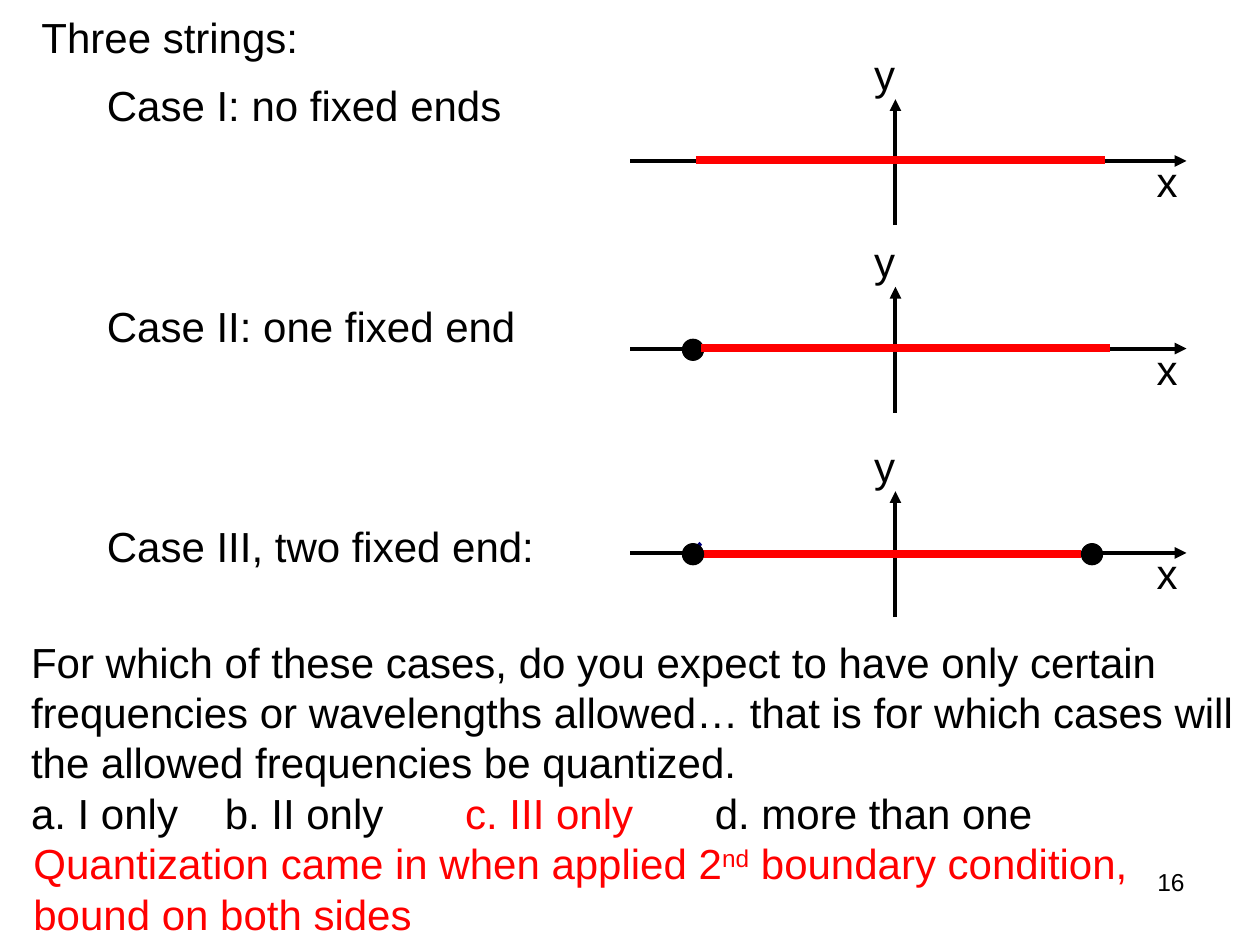
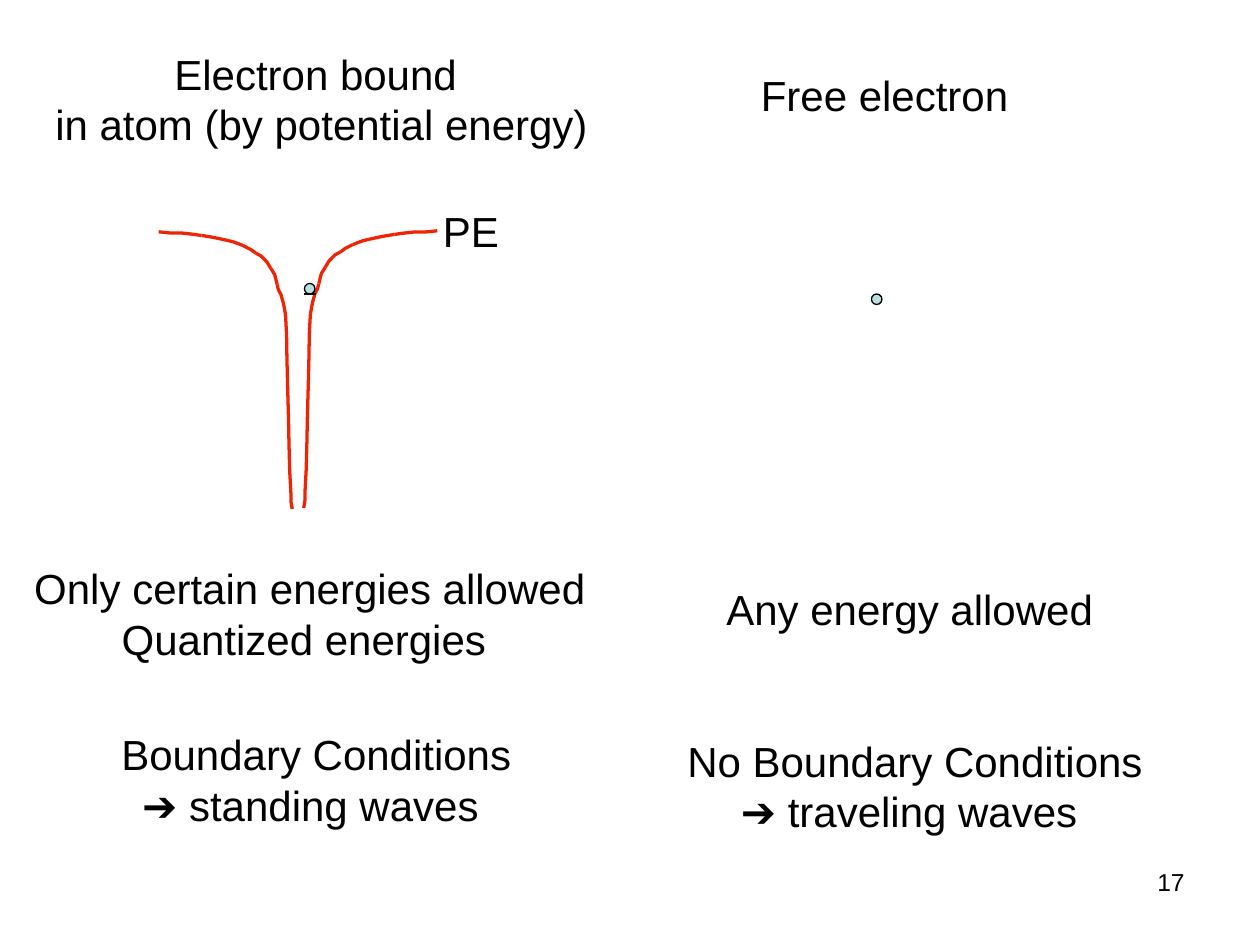
from dataclasses import dataclass
from typing import Any

from lxml import etree
from pptx import Presentation
from pptx.dml.color import RGBColor
from pptx.enum.shapes import MSO_CONNECTOR, MSO_SHAPE
from pptx.enum.text import MSO_AUTO_SIZE, PP_ALIGN
from pptx.oxml.ns import qn
from pptx.util import Pt

STRAIGHT = MSO_CONNECTOR.STRAIGHT
ELLIPSE = MSO_SHAPE.OVAL
FIT_TEXT = MSO_AUTO_SIZE.SHAPE_TO_FIT_TEXT
LEFT, CENTER, RIGHT = PP_ALIGN.LEFT, PP_ALIGN.CENTER, PP_ALIGN.RIGHT

BLACK, RED, NAVY = "000000", "FF0000", "000080"
CURVE_RED, ELECTRON_BLUE = "EE2504", "BBE0E3"
FONT = "Arial"
BODY_SIZE, NUMBER_SIZE = 24, 14

Point = tuple[float, float]


@dataclass(frozen=True)
class Run:
    text: str
    color: str = BLACK
    raised: bool = False


@dataclass(frozen=True)
class Label:
    left: float
    top: float
    width: float
    height: float
    paragraphs: tuple[tuple[Run, ...], ...]
    align: Any = LEFT
    wrap: bool = False
    size: float = BODY_SIZE
    tabs: tuple[float, ...] = ()


@dataclass(frozen=True)
class StringCase:
    axis_y: float
    caption: Label
    string_left: float
    string_right: float
    string_y: float
    tick: tuple[Point, ...] = ()
    knots_below: tuple[float, ...] = ()
    knots_above: tuple[float, ...] = ()


def lines(*texts: str, color: str = BLACK) -> tuple[tuple[Run, ...], ...]:
    return tuple((Run(text, color),) for text in texts)


def rgb(color: str) -> RGBColor:
    return RGBColor.from_string(color)


def apply_formats(target: Any, formats: dict[str, Any]) -> None:
    for name, value in formats.items():
        setattr(target, name, value)


def style_line(line: Any, color: str, width: float) -> None:
    line.color.rgb = rgb(color)
    line.width = Pt(width)


def add_label(slide: Any, label: Label) -> None:
    shape = slide.shapes.add_textbox(
        Pt(label.left), Pt(label.top), Pt(label.width), Pt(label.height))
    frame = shape.text_frame
    apply_formats(frame, {"word_wrap": label.wrap, "auto_size": FIT_TEXT})
    for index, runs in enumerate(label.paragraphs):
        paragraph = frame.add_paragraph() if index else frame.paragraphs[0]
        paragraph.alignment = label.align
        for item in runs:
            run = paragraph.add_run()
            run.text = item.text
            apply_formats(run.font, {"name": FONT, "size": Pt(label.size)})
            run.font.color.rgb = rgb(item.color)
            if item.raised:
                run.font._element.set("baseline", "30000")
    if label.tabs:
        # Tab stops belong to the last paragraph, the row of answers
        properties = paragraph._p.get_or_add_pPr()
        tab_list = etree.SubElement(properties, qn("a:tabLst"))
        for position in label.tabs:
            etree.SubElement(tab_list, qn("a:tab"), pos=str(Pt(position)), algn="l")


def add_line(slide: Any, start: Point, end: Point, color: str = BLACK,
             width: float = 2.25, arrow: bool = False) -> None:
    connector = slide.shapes.add_connector(STRAIGHT, *map(Pt, start + end))
    style_line(connector.line, color, width)
    if arrow:
        outline = connector.line._get_or_add_ln()
        etree.SubElement(outline, qn("a:tailEnd"), type="triangle")
    etree.SubElement(connector._element.spPr, qn("a:effectLst"))


def add_dot(slide: Any, center: Point, diameter: float, fill: str) -> None:
    left, top = (value - diameter / 2 for value in center)
    dot = slide.shapes.add_shape(ELLIPSE, Pt(left), Pt(top), Pt(diameter), Pt(diameter))
    dot.shadow.inherit = False
    dot.fill.solid()
    dot.fill.fore_color.rgb = rgb(fill)
    style_line(dot.line, BLACK, 0.75)


def add_polyline(slide: Any, points: list[Point], color: str, width: float) -> None:
    start, *others = [(Pt(x), Pt(y)) for x, y in points]
    builder = slide.shapes.build_freeform(*start)
    builder.add_line_segments(others, close=False)
    shape = builder.convert_to_shape()
    shape.shadow.inherit = False
    shape.fill.background()
    style_line(shape.line, color, width)


def add_numbered_slide(presentation: Any, number: int) -> Any:
    slide = presentation.slides.add_slide(presentation.slide_layouts[6])
    add_label(slide, Label(516, 492, 168, 37, lines(str(number)), RIGHT, True, NUMBER_SIZE))
    return slide


# Strings slide: three sets of axes, each with a string
ORIGIN_X, AXIS_LEFT, AXIS_RIGHT = 511.7, 360, 678
KNOT_DIAMETER, KNOT_DROP = 12, 0.7
LEFT_KNOT, RIGHT_KNOT = 396, 624

CASES = (
    StringCase(92, Label(54, 42, 240, 36, lines("Case I: no fixed ends")),
               397.6, 631.5, 91.3),
    StringCase(199.2, Label(54, 168, 248, 36, lines("Case II: one fixed end")),
               400.5, 634.5, 198.9,
               tick=((396.7, 199.4), (398.2, 196.6)), knots_below=(LEFT_KNOT,)),
    StringCase(316, Label(54, 294, 265, 36, lines("Case III, two fixed end:")),
               396.7, 617.8, 316.6,
               tick=((398.2, 313.4), (398.9, 312), (400.5, 310.5)),
               knots_above=(LEFT_KNOT, RIGHT_KNOT)),
)

STRING_LABELS = (
    Label(16.6, 3, 168, 36, lines("Three strings:")),
    Label(10.7, 360, 709, 122, (
        (Run("For which of these cases, do you expect to have only certain frequencies "
             "or wavelengths allowed… that is for which cases will the allowed "
             "frequencies be quantized."),),
        (Run("a. I only\tb. II only\t"), Run("c. III only", RED),
         Run("\td. more than one")),
    ), wrap=True, tabs=(110.7, 248.1, 390.7)),
    Label(12, 475.2, 691, 65, (
        (Run("Quantization came in when applied 2", RED), Run("nd", RED, True),
         Run(" boundary condition, bound on both sides", RED)),
    ), wrap=True),
)


def draw_case(slide: Any, case: StringCase) -> None:
    y = case.axis_y
    add_line(slide, (ORIGIN_X, y + 36.7), (ORIGIN_X, y - 35.3), arrow=True)
    add_line(slide, (AXIS_LEFT, y), (AXIS_RIGHT, y), arrow=True)
    add_label(slide, Label(653.8, y - 6.6, 26.6, 36, lines("x")))
    add_label(slide, Label(492.5, y - 68, 26.6, 36, lines("y")))
    add_label(slide, case.caption)
    if case.tick:
        add_polyline(slide, list(case.tick), NAVY, 2.25)

    def add_knots(centers: tuple[float, ...]) -> None:
        for x in centers:
            add_dot(slide, (x, y + KNOT_DROP), KNOT_DIAMETER, BLACK)

    add_knots(case.knots_below)
    add_line(slide, (case.string_left, case.string_y),
             (case.string_right, case.string_y), RED, 4.5)
    add_knots(case.knots_above)


def build_strings_slide(presentation: Any) -> None:
    slide = add_numbered_slide(presentation, 16)
    for case in CASES:
        draw_case(slide, case)
    for label in STRING_LABELS:
        add_label(slide, label)


# Electron slide: a potential well beside a free electron
WELL_CENTER_X, RIGHT_BRANCH_RISE = 170.3, 0.6
ELECTRON_DIAMETER = 6
ELECTRONS = ((177, 165), (501, 171))
WELL_BOTTOM: Point = (167, 290.9)
# Each segment of the left branch goes on from the end of the one before
LEFT_SEGMENTS: list[list[Point]] = [
    [(166.3, 286.6), (166.3, 282.2), (165.6, 269.3), (165.2, 254.2), (164.9, 238.3),
     (164.4, 221), (164, 204.5), (163.8, 191.5), (163.2, 180)],
    [(162, 173.5), (160.6, 168.5), (159.1, 165.6), (158.4, 162.7)],
    [(157.7, 159.8), (157, 157), (154.8, 153.4)],
    [(152.6, 149.8), (150.5, 147.6)],
    [(149, 146.2), (146.2, 144.7)],
    [(143.3, 142.6), (139, 140.4)],
    [(135.4, 139), (133.2, 138.2), (130.3, 137.5)],
    [(123.8, 136.1), (120.2, 135.4), (115.2, 134.6)],
    [(110.2, 133.9), (103.7, 133.2), (97.2, 133.2), (90.7, 132.5)],
]

ELECTRON_LABELS = (
    Label(24.2, 24, 319, 65,
          lines("Electron bound ", "in atom (by potential energy)"), CENTER),
    Label(425.5, 36, 160, 36, lines("Free electron"), CENTER),
    Label(246, 114, 47, 36, lines("PE")),
    Label(12.5, 318, 329, 65,
          lines("Only certain energies allowed", "Quantized energies "), CENTER),
    Label(408, 330, 224, 36, lines("Any energy allowed")),
    Label(61.2, 412.8, 239, 65.5,
          lines("Boundary Conditions", "➔ standing waves "), CENTER, True),
    Label(382.3, 416.5, 281, 65.5,
          lines("No Boundary Conditions", "➔ traveling waves "), CENTER, True),
)


def mirror(point: Point) -> Point:
    return 2 * WELL_CENTER_X - point[0], point[1] - RIGHT_BRANCH_RISE


def draw_well(slide: Any) -> None:
    start = WELL_BOTTOM
    for segment in LEFT_SEGMENTS:
        points = [start, *segment]
        for side in (points, list(map(mirror, points))):
            add_polyline(slide, side, CURVE_RED, 1.88)
        start = segment[-1]


def build_electron_slide(presentation: Any) -> None:
    slide = add_numbered_slide(presentation, 17)
    draw_well(slide)
    for center in ELECTRONS:
        add_dot(slide, center, ELECTRON_DIAMETER, ELECTRON_BLUE)
    # Energy level under the bound electron
    add_line(slide, (174, 168), (180.5, 168), width=0.75)
    for label in ELECTRON_LABELS:
        add_label(slide, label)


def main() -> None:
    presentation = Presentation()
    apply_formats(presentation, {"slide_width": Pt(720), "slide_height": Pt(540)})
    build_strings_slide(presentation)
    build_electron_slide(presentation)
    presentation.save("out.pptx")


if __name__ == "__main__":
    main()
